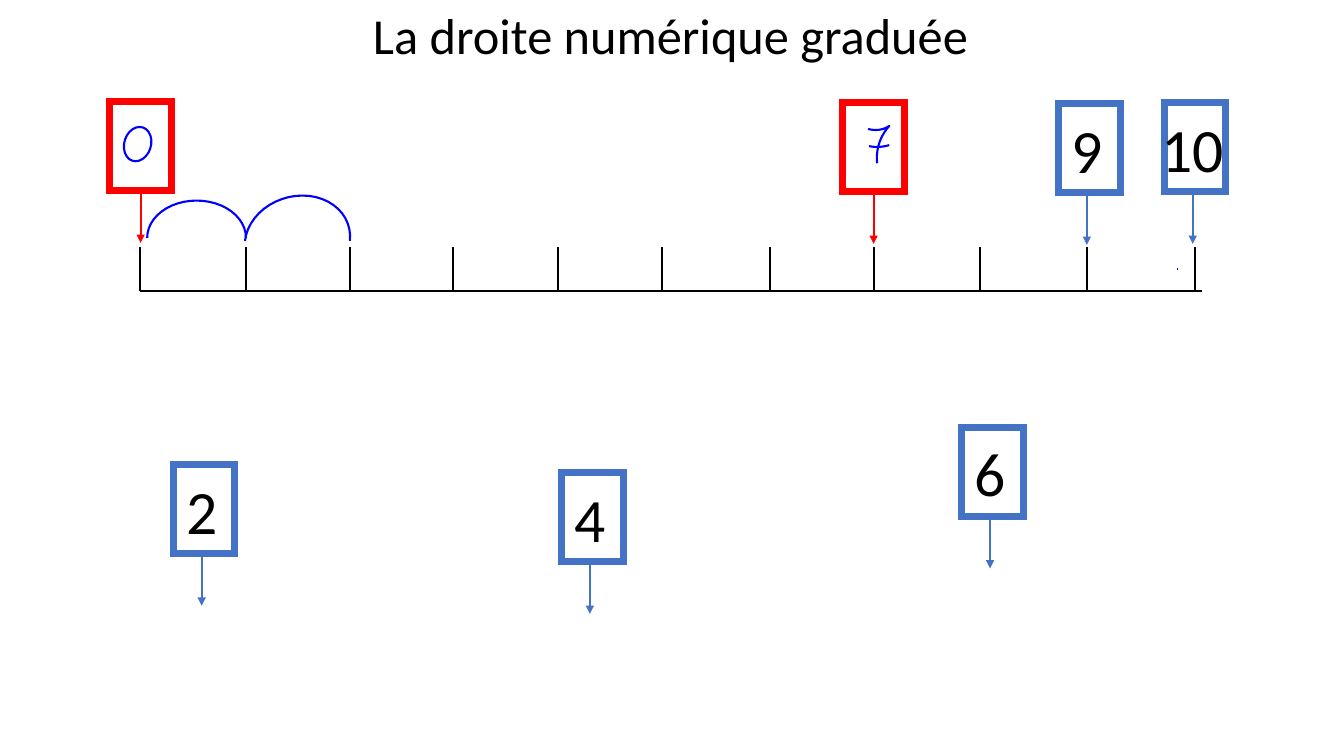
from math import cos, pi, sin

from lxml import etree
from pptx import Presentation
from pptx.dml.color import RGBColor
from pptx.enum.shapes import MSO_CONNECTOR, MSO_SHAPE
from pptx.enum.text import MSO_AUTO_SIZE, PP_ALIGN
from pptx.oxml.ns import qn
from pptx.util import Inches, Pt

BLACK = RGBColor(0x00, 0x00, 0x00)
BLUE = RGBColor(0x44, 0x72, 0xC4)
RED = RGBColor(0xFF, 0x00, 0x00)
INK = RGBColor(0x00, 0x00, 0xFF)

STRAIGHT = MSO_CONNECTOR.STRAIGHT
RECT = MSO_SHAPE.RECTANGLE
GROW = MSO_AUTO_SIZE.SHAPE_TO_FIT_TEXT
LEFT = PP_ALIGN.LEFT
CENTER = PP_ALIGN.CENTER
BOTTOM_SITE = 2

AXIS_Y = 2.89
AXIS_END = 11.92
TICK_TOP = 2.45
TICKS = [1.39, 2.44, 3.47, 4.49, 5.53, 6.57, 7.64, 8.67, 9.72, 10.78, 11.85]

CARD_W, CARD_H = 0.61, 0.88
ARROW_END = 1.4
NUMBER_CARDS = [("10", 11.55, 1.02), ("4", 5.57, 4.69), ("2", 1.72, 4.61),
                ("6", 9.54, 4.24), ("9", 10.5, 1.03)]
EMPTY_CARDS = [(1.09, 1.01), (8.36, 1.02)]

STEPS = 24


def arc(cx, cy, rx, ry, turn, lean=0):
    angles = [pi - turn * i / STEPS for i in range(STEPS + 1)]
    return [(cx + rx * cos(a) + lean * sin(a), cy - ry * sin(a)) for a in angles]


def curve(start, control, end):
    points = []
    for i in range(STEPS + 1):
        t = i / STEPS
        weights = (1 - t) ** 2, 2 * t * (1 - t), t ** 2
        points.append(tuple(sum(w * v for w, v in zip(weights, axis))
                            for axis in zip(start, control, end)))
    return points


class NumberLineSlide:
    font = "Calibri"
    thin = Pt(1.5)
    thick = Pt(5)

    def __init__(self, prs):
        self.s = prs.slides.add_slide(prs.slide_layouts[6])

    def apply(self, target, values):
        for name, value in values.items():
            setattr(target, name, value)

    def outline(self, sp, color, width):
        sp.line.color.rgb = color
        sp.line.width = width
        return sp._element.spPr.find(qn("a:ln"))

    def group(self, *items):
        self.s.shapes.add_group_shape(shapes=items)

    def line(self, x1, y1, x2, y2, color=BLACK, arrow=False):
        cn = self.s.shapes.add_connector(
            STRAIGHT, Inches(x1), Inches(y1), Inches(x2), Inches(y2))
        ln = self.outline(cn, color, self.thin)
        if arrow:
            etree.SubElement(ln, qn("a:tailEnd"), type="triangle")
        etree.SubElement(cn._element.spPr, qn("a:effectLst"))
        return cn

    def box(self, x, y, color):
        sp = self.s.shapes.add_shape(
            RECT, Inches(x), Inches(y), Inches(CARD_W), Inches(CARD_H))
        sp.fill.background()
        sp.shadow.inherit = False
        ln = self.outline(sp, color, self.thick)
        etree.SubElement(ln, qn("a:miter"), lim="800000")
        return sp

    def text(self, x, y, w, h, text, size, align=LEFT):
        sp = self.s.shapes.add_textbox(Inches(x), Inches(y), Inches(w), Inches(h))
        tf = sp.text_frame
        self.apply(tf, {"word_wrap": True, "auto_size": GROW})
        p = tf.paragraphs[0]
        p.alignment = align
        r = p.add_run()
        r.text = text
        self.apply(r.font, {"name": self.font, "size": Pt(size)})
        r.font.color.rgb = BLACK
        return sp

    def ruler(self):
        axis = self.line(TICKS[0], AXIS_Y, AXIS_END, AXIS_Y)
        ticks = [self.line(x, TICK_TOP, x, AXIS_Y) for x in TICKS]
        self.group(axis, *ticks)

    def number_card(self, number, x, y):
        sp = self.box(x, y, BLUE)
        label = self.text(x - 0.16, y + 0.03, 0.88, 0.84, number, 44, CENTER)
        tip_x = x + 0.28
        arrow = self.line(tip_x, y + CARD_H, tip_x, y + ARROW_END, BLUE, True)
        self.group(sp, label, arrow)

    def empty_card(self, x, y):
        sp = self.box(x, y, RED)
        tip_x = x + CARD_W / 2
        arrow = self.line(tip_x, y + CARD_H, tip_x, y + ARROW_END, RED, True)
        arrow.begin_connect(sp, BOTTOM_SITE)
        self.group(sp, arrow)

    def stroke(self, points):
        start, *rest = [(Inches(x), Inches(y)) for x, y in points]
        fb = self.s.shapes.build_freeform(*start)
        fb.add_line_segments(rest, close=False)
        sp = fb.convert_to_shape()
        sp.fill.background()
        sp.shadow.inherit = False
        ln = self.outline(sp, INK, self.thin)
        etree.SubElement(ln, qn("a:round"))
        return sp

    def handwritten_zero(self):
        self.stroke(arc(1.365, 1.43, 0.135, 0.17, 2 * pi, lean=0.02))

    def handwritten_seven(self):
        corner = (8.82, 1.25)
        top = curve((8.61, 1.28), (8.73, 1.31), corner)
        stem = curve(corner, (8.68, 1.41), (8.7, 1.62))
        bar = curve((8.62, 1.45), (8.72, 1.47), (8.82, 1.44))
        self.group(self.stroke(bar), self.stroke(top + stem[1:]))

    def jumps(self):
        first = arc(1.95, 2.36, 0.49, 0.37, pi)
        second = arc(2.95, 2.39, 0.52, 0.45, pi, lean=0.05)
        self.group(self.stroke(second), self.stroke(first))

    def pen_dot(self):
        self.stroke([(11.67, 2.67), (11.68, 2.67)])


def main():
    prs = Presentation()
    prs.slide_width = Inches(13.33)
    prs.slide_height = Inches(7.5)
    slide = NumberLineSlide(prs)

    slide.ruler()
    for number, x, y in NUMBER_CARDS:
        slide.number_card(number, x, y)
    for x, y in EMPTY_CARDS:
        slide.empty_card(x, y)
    slide.text(3.6, -0.01, 8.09, 0.71, "La droite numérique graduée", 36)

    slide.handwritten_zero()
    slide.jumps()
    slide.pen_dot()
    slide.handwritten_seven()

    prs.save("out.pptx")


if __name__ == "__main__":
    main()
